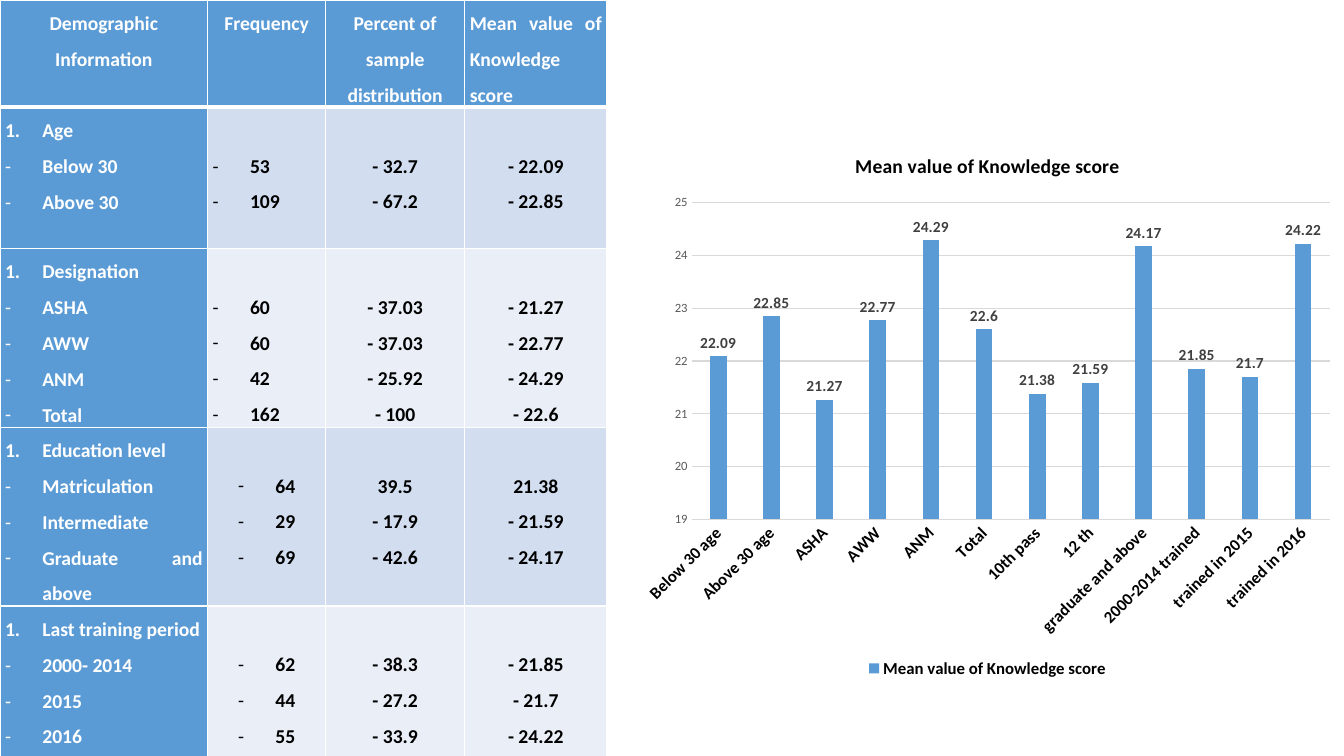
from dataclasses import dataclass

from lxml import etree
from pptx import Presentation
from pptx.chart.data import CategoryChartData
from pptx.dml.color import RGBColor
from pptx.enum.chart import XL_CHART_TYPE, XL_LABEL_POSITION, XL_LEGEND_POSITION, XL_TICK_MARK
from pptx.enum.text import PP_ALIGN
from pptx.oxml.ns import qn
from pptx.util import Inches, Pt

COLUMN_CLUSTERED = XL_CHART_TYPE.COLUMN_CLUSTERED
OUTSIDE_END = XL_LABEL_POSITION.OUTSIDE_END
LEGEND_BOTTOM = XL_LEGEND_POSITION.BOTTOM
NO_TICK = XL_TICK_MARK.NONE
CENTER, JUSTIFY = PP_ALIGN.CENTER, PP_ALIGN.JUSTIFY


@dataclass(frozen=True)
class Theme:
    font: str = "Calibri"
    accent: str = "5B9BD5"
    bands: tuple = ("D2DEEF", "EAEFF7")
    white: str = "FFFFFF"
    black: str = "000000"
    grid: str = "D9D9D9"
    axis_text: str = "595959"
    label_text: str = "404040"
    body: int = 14
    chart_text: int = 12
    label: int = 11
    chart_base: int = 10
    tick: int = 9


THEME = Theme()
LINE_SPACING = 1.5
LINE_HEIGHT = 0.35
INDENT = 0.37
SIDE_MARGIN = 0.05
COLUMN_WIDTHS = (2.06, 1.17, 1.38, 1.41)
ROW_HEIGHTS = (1.05, 1.4, 1.75, 1.75, 1.75)
SCORE = "Mean value of Knowledge score"
HEADERS = ("Demographic Information", "Frequency", "Percent of sample distribution", SCORE)
GROUPS = (
    ("Age", JUSTIFY, (
        ("Below 30", "53", "- 32.7", "- 22.09"),
        ("Above 30", "109", "- 67.2", "- 22.85"))),
    ("Designation", JUSTIFY, (
        ("ASHA", "60", "- 37.03", "- 21.27"),
        ("AWW", "60", "- 37.03", "- 22.77"),
        ("ANM", "42", "- 25.92", "- 24.29"),
        ("Total", "162", "- 100", "- 22.6"))),
    ("Education level", CENTER, (
        ("Matriculation", "64", "39.5", "21.38"),
        ("Intermediate", "29", "- 17.9", "- 21.59"),
        ("Graduate and above", "69", "- 42.6", "- 24.17"))),
    ("Last training period", CENTER, (
        ("2000- 2014", "62", "- 38.3", "- 21.85"),
        ("2015", "44", "- 27.2", "- 21.7"),
        ("2016", "55", "- 33.9", "- 24.22"))),
)
SCORES = {
    "Below 30 age": 22.09, "Above 30 age": 22.85, "ASHA": 21.27, "AWW": 22.77,
    "ANM": 24.29, "Total": 22.6, "10th pass": 21.38, "12 th": 21.59,
    "graduate and above": 24.17, "2000-2014 trained": 21.85,
    "trained in 2015": 21.7, "trained in 2016": 24.22,
}


def style_font(font, size, color, bold=False):
    font.name = THEME.font
    font.size = Pt(size)
    font.bold = bold
    font.color.rgb = RGBColor.from_string(color)


def add_bullet(para, numbered):
    properties = para._p.get_or_add_pPr()
    properties.set("marL", str(Inches(INDENT)))
    properties.set("indent", str(-Inches(INDENT)))
    etree.SubElement(properties, qn("a:buFont"), typeface=THEME.font)
    if numbered:
        etree.SubElement(properties, qn("a:buAutoNum"), type="arabicPeriod")
    else:
        etree.SubElement(properties, qn("a:buChar"), char="-")


def set_borders(cell, top, bottom):
    properties = cell._tc.get_or_add_tcPr()
    for side, width in (("L", 1), ("R", 1), ("T", top), ("B", bottom)):
        line = etree.SubElement(properties, qn(f"a:ln{side}"), w=str(Pt(width)))
        fill = etree.SubElement(line, qn("a:solidFill"))
        etree.SubElement(fill, qn("a:srgbClr"), val=THEME.white)


def fill_cell(cell, lines, align, color, background, skip=0, marks=(), top=1, bottom=1):
    set_borders(cell, top, bottom)
    cell.fill.solid()
    cell.fill.fore_color.rgb = RGBColor.from_string(background)
    cell.margin_left = cell.margin_right = Inches(SIDE_MARGIN)
    cell.margin_top = Inches(skip * LINE_HEIGHT)
    cell.margin_bottom = 0
    frame = cell.text_frame
    for index, text in enumerate(lines):
        para = frame.paragraphs[0] if index == 0 else frame.add_paragraph()
        para.alignment = align
        para.line_spacing = LINE_SPACING
        if marks:
            add_bullet(para, marks[index] == "1.")
        span = para.add_run()
        span.text = text
        style_font(span.font, THEME.body, color, True)


def add_group(table, row, group):
    name, frequency_align, entries = group
    labels, *values = zip(*entries)
    dashes = ("-",) * len(entries)
    top = 3 if row == 1 else 1
    fill_cell(table.cell(row, 0), (name, *labels), JUSTIFY, THEME.white, THEME.accent,
              marks=("1.", *dashes), top=top)
    for column, lines in enumerate(values, 1):
        is_frequency = column == 1
        fill_cell(table.cell(row, column), lines,
                  frequency_align if is_frequency else CENTER,
                  THEME.black, THEME.bands[(row - 1) % 2], skip=1,
                  marks=dashes if is_frequency else (), top=top)


def add_demographics(page, box):
    table = page.shapes.add_table(len(ROW_HEIGHTS), len(COLUMN_WIDTHS), *map(Inches, box)).table
    for column, width in zip(table.columns, COLUMN_WIDTHS):
        column.width = Inches(width)
    for row, height in zip(table.rows, ROW_HEIGHTS):
        row.height = Inches(height)
    for column, header in enumerate(HEADERS):
        fill_cell(table.cell(0, column), (header,), JUSTIFY if header == SCORE else CENTER,
                  THEME.white, THEME.accent, bottom=3)
    for row, group in enumerate(GROUPS, 1):
        add_group(table, row, group)


def style_axes(chart):
    categories, values = chart.category_axis, chart.value_axis
    for axis in (categories, values):
        axis.major_tick_mark = axis.minor_tick_mark = NO_TICK
    style_font(categories.tick_labels.font, THEME.chart_text, THEME.black, True)
    categories._element.find(qn("c:txPr")).find(qn("a:bodyPr")).set("rot", "-2700000")
    style_font(values.tick_labels.font, THEME.tick, THEME.axis_text)
    values.minimum_scale, values.maximum_scale, values.major_unit = 19, 25, 1
    values.format.line.fill.background()
    for line in (categories.format.line, values.major_gridlines.format.line):
        line.color.rgb = RGBColor.from_string(THEME.grid)
        line.width = Pt(0.75)


def add_score_chart(page, box):
    data = CategoryChartData()
    data.categories = list(SCORES)
    data.add_series(SCORE, list(SCORES.values()))
    chart = page.shapes.add_chart(COLUMN_CLUSTERED, *map(Inches, box), data).chart
    style_font(chart.font, THEME.chart_base, THEME.black)
    chart.has_title = True
    span = chart.chart_title.text_frame.paragraphs[0].add_run()
    span.text = SCORE
    style_font(span.font, THEME.body, THEME.black, True)
    chart.chart_title.include_in_layout = False
    chart.has_legend = True
    chart.legend.position = LEGEND_BOTTOM
    chart.legend.include_in_layout = False
    style_font(chart.legend.font, THEME.chart_text, THEME.black, True)
    style_axes(chart)
    plot = chart.plots[0]
    plot.vary_by_categories = False
    plot.gap_width, plot.overlap = 219, -27
    series = plot.series[0]
    series.format.fill.solid()
    series.format.fill.fore_color.rgb = RGBColor.from_string(THEME.accent)
    labels = series.data_labels
    labels.show_value = True
    labels.position = OUTSIDE_END
    style_font(labels.font, THEME.label, THEME.label_text, True)


def main():
    deck = Presentation()
    deck.slide_width, deck.slide_height = Inches(13.33), Inches(7.5)
    page = deck.slides.add_slide(deck.slide_layouts[6])
    add_score_chart(page, (6.26, 1.31, 7.07, 5.46))
    add_demographics(page, (0, 0, sum(COLUMN_WIDTHS), sum(ROW_HEIGHTS)))
    deck.save("out.pptx")


if __name__ == "__main__":
    main()
